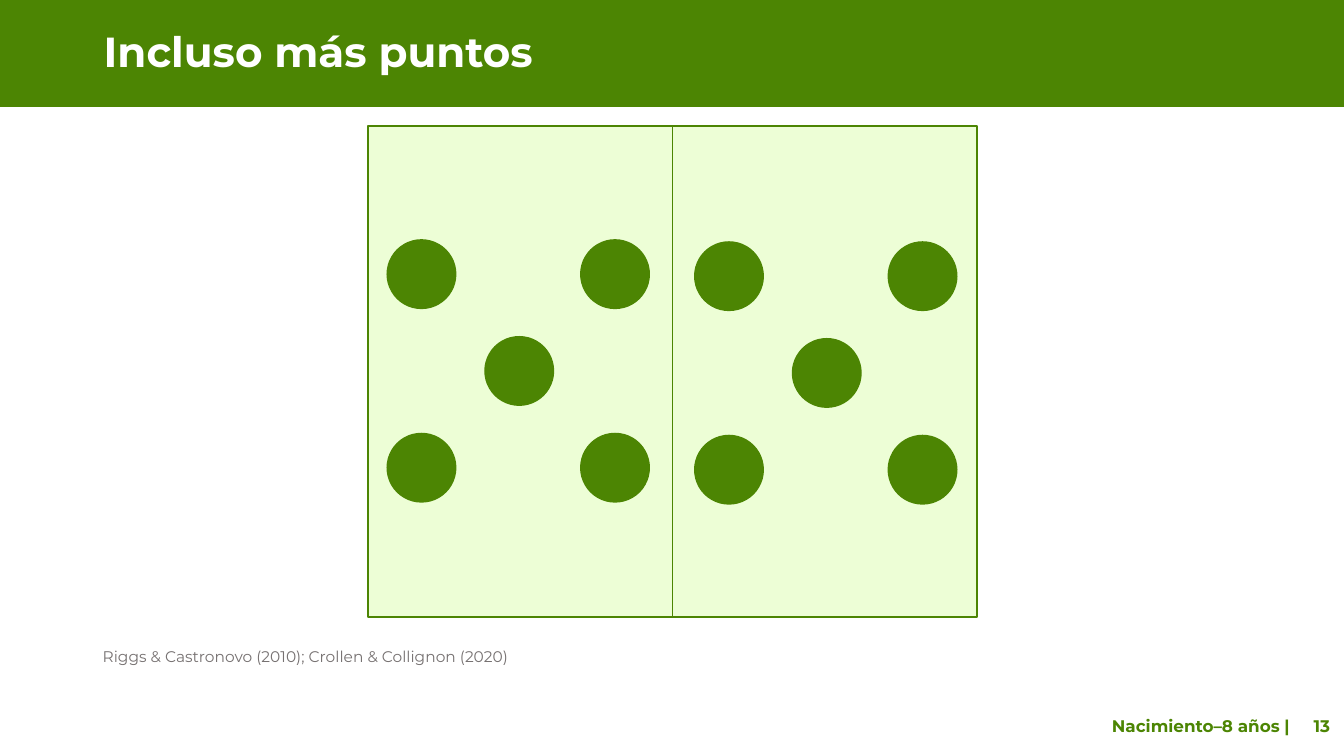
from lxml.etree import SubElement
from pptx import Presentation
from pptx.dml.color import RGBColor
from pptx.enum.shapes import MSO_CONNECTOR, MSO_SHAPE
from pptx.enum.text import MSO_ANCHOR
from pptx.oxml.ns import qn
from pptx.util import Inches, Pt

GREEN, PALE, WHITE, GRAY = "4C8503", "EDFED6", "FFFFFF", "767171"


def rgb(value):
    return RGBColor.from_string(value)


def add_shape(shapes, kind, box, fill, line=None):
    sp = shapes.add_shape(kind, *[Inches(v) for v in box])
    sp.shadow.inherit = False
    sp.fill.solid()
    sp.fill.fore_color.rgb = rgb(fill)
    if line:
        sp.line.color.rgb = rgb(line)
        sp.line.width = Pt(1)
    else:
        sp.line.fill.background()
    return sp


prs = Presentation()
prs.slide_width, prs.slide_height = Inches(13.33), Inches(7.5)
s = prs.slides.add_slide(prs.slide_layouts[6])

# Header band
add_shape(s.shapes, MSO_SHAPE.RECTANGLE, (0, 0, 13.33, 1.06), GREEN)

# Panel with two five-dot patterns
group = s.shapes.add_group_shape()
panel = add_shape(group.shapes, MSO_SHAPE.RECTANGLE, (3.65, 1.25, 6.04, 4.87), PALE, GREEN)
offsets = [(0, 0), (1.92, 0), (0.97, 0.96), (0, 1.92), (1.92, 1.92)]
for left, top in [(3.84, 2.38), (6.89, 2.4)]:
    for dx, dy in offsets:
        add_shape(group.shapes, MSO_SHAPE.OVAL, (left + dx, top + dy, 0.68, 0.68), GREEN, GREEN)

# Divider between the halves
divider = group.shapes.add_connector(
    MSO_CONNECTOR.STRAIGHT, Inches(6.67), Inches(1.25), Inches(6.67), Inches(6.12))
divider.begin_connect(panel, 0)
divider.end_connect(panel, 2)
divider.line.color.rgb = rgb(GREEN)
divider.line.width = Pt(1)
SubElement(divider._element.spPr, qn("a:effectLst"))

# Title, citation and footer: text, box, colour, font and paragraph formats, tab stop
texts = [
    ("Incluso más puntos", (0.93, 0.26, 11.85, 0.56), WHITE,
     {"size": Pt(30), "bold": True}, {"line_spacing": 0.9}, None),
    ("Riggs & Castronovo (2010); Crollen & Collignon (2020)", (0.92, 6.34, 11.5, 0.31), GRAY,
     {"size": Pt(11)}, {"line_spacing": 1.2, "space_after": Pt(6)}, None),
    ("Nacimiento–8 años |\t13", (10.93, 7, 2.37, 0.4), GREEN,
     {"size": Pt(12), "bold": True}, {}, 2),
]
for text, box, color, font_format, par_format, tab in texts:
    tf = s.shapes.add_textbox(*[Inches(v) for v in box]).text_frame
    tf.word_wrap = True
    tf.vertical_anchor = MSO_ANCHOR.MIDDLE
    p = tf.paragraphs[0]
    for name, value in par_format.items():
        setattr(p, name, value)
    if tab:
        tabs = SubElement(p._p.get_or_add_pPr(), qn("a:tabLst"))
        SubElement(tabs, qn("a:tab"), pos=str(Inches(tab)), algn="l")
    r = p.add_run()
    r.text = text
    r.font.name = "Montserrat"
    r.font.color.rgb = rgb(color)
    for name, value in font_format.items():
        setattr(r.font, name, value)

prs.save("out.pptx")
